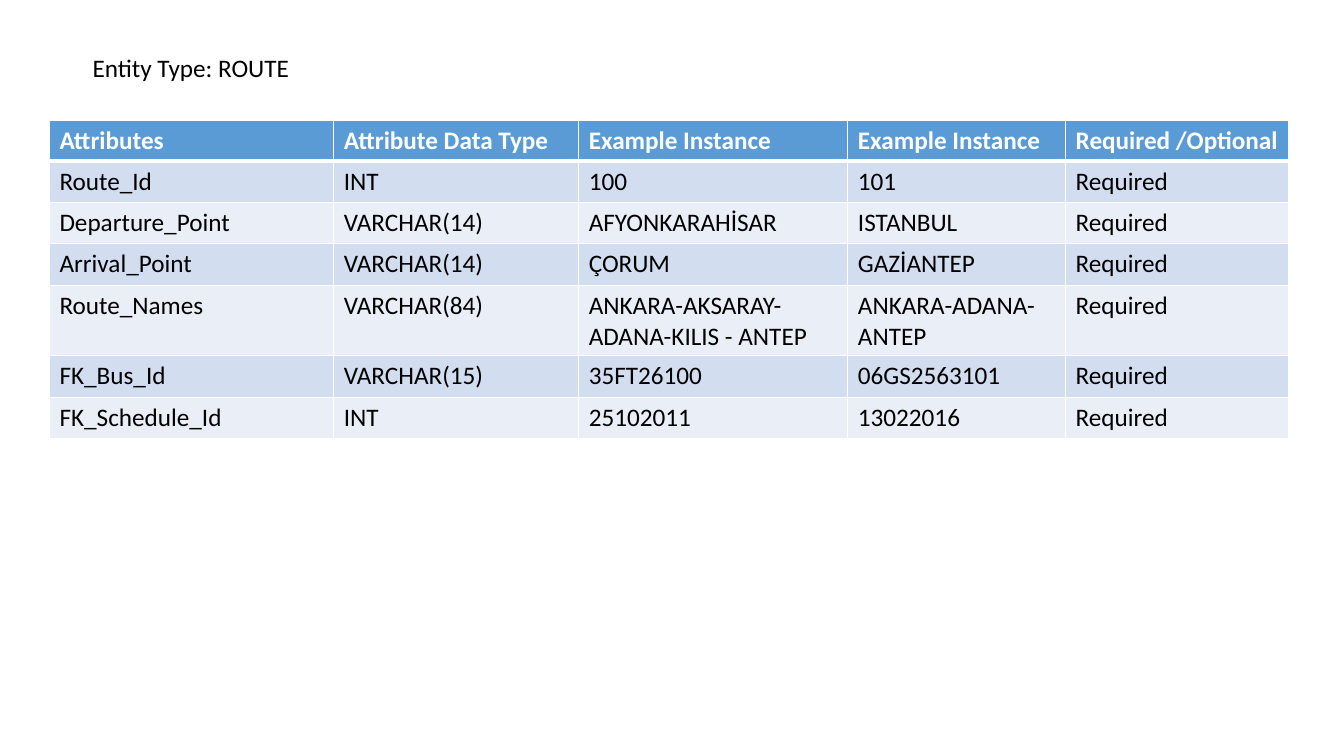
import pptx
import pptx.util
import pptx.dml.color
import pptx.enum.text
import pptx.oxml.ns
import lxml.etree

TITLE = "Entity Type: ROUTE"
HEADINGS = ("Attributes", "Attribute Data Type", "Example Instance", "Example Instance", "Required /Optional")
ATTRIBUTES = [
    ("Route_Id", "INT", "100", "101", "Required"),
    ("Departure_Point", "VARCHAR(14)", "AFYONKARAHİSAR", "ISTANBUL", "Required"),
    ("Arrival_Point", "VARCHAR(14)", "ÇORUM", "GAZİANTEP", "Required"),
    ("Route_Names", "VARCHAR(84)", "ANKARA-AKSARAY-ADANA-KILIS - ANTEP", "ANKARA-ADANA-ANTEP", "Required"),
    ("FK_Bus_Id", "VARCHAR(15)", "35FT26100", "06GS2563101", "Required"),
    ("FK_Schedule_Id", "INT", "25102011", "13022016", "Required"),
]
COLORS = {"text": "000000", "white": "FFFFFF", "header": "5B9BD5", "odd": "D2DEEF", "even": "EAEFF7"}
COLUMN_WIDTHS = (2.82, 2.43, 2.67, 2.16, 2.21)
ROW_HEIGHT = 0.41
TABLE_LEFT, TABLE_TOP = 0.49, 1.19


def write(frame, text, color="text", bold=False, size=18, font="Calibri"):
    span = frame.paragraphs[0].add_run()
    span.text = text
    span.font.name = font
    span.font.size = pptx.util.Pt(size)
    span.font.bold = bold
    span.font.color.rgb = pptx.dml.color.RGBColor.from_string(COLORS[color])


def draw_borders(cell, top, bottom):
    properties = cell._tc.get_or_add_tcPr()
    for side, points in (("L", 1), ("R", 1), ("T", top), ("B", bottom)):
        line = lxml.etree.SubElement(properties, pptx.oxml.ns.qn(f"a:ln{side}"), w=str(pptx.util.Pt(points)))
        fill = lxml.etree.SubElement(line, pptx.oxml.ns.qn("a:solidFill"))
        lxml.etree.SubElement(fill, pptx.oxml.ns.qn("a:srgbClr"), val=COLORS["white"])


def add_title(page):
    box = page.shapes.add_textbox(*map(pptx.util.Inches, (0.82, 0.47, 2.17, 0.4)))
    box.text_frame.word_wrap = False
    box.text_frame.auto_size = pptx.enum.text.MSO_AUTO_SIZE.SHAPE_TO_FIT_TEXT
    write(box.text_frame, TITLE)


def add_attribute_table(page):
    rows = [HEADINGS, *ATTRIBUTES]
    bounds = (TABLE_LEFT, TABLE_TOP, sum(COLUMN_WIDTHS), ROW_HEIGHT * len(rows))
    table = page.shapes.add_table(len(rows), len(HEADINGS), *map(pptx.util.Inches, bounds)).table
    for column, width in zip(table.columns, COLUMN_WIDTHS):
        column.width = pptx.util.Inches(width)
    for index, values in enumerate(rows):
        table.rows[index].height = pptx.util.Inches(ROW_HEIGHT)
        heading = index == 0
        shade = "header" if heading else "odd" if index % 2 else "even"
        for position, value in enumerate(values):
            cell = table.cell(index, position)
            draw_borders(cell, top=3 if index == 1 else 1, bottom=3 if heading else 1)
            cell.fill.solid()
            cell.fill.fore_color.rgb = pptx.dml.color.RGBColor.from_string(COLORS[shade])
            write(cell.text_frame, value, color="white" if heading else "text", bold=heading)


def main():
    deck = pptx.Presentation()
    deck.slide_width = pptx.util.Inches(13.33)
    deck.slide_height = pptx.util.Inches(7.5)
    page = deck.slides.add_slide(deck.slide_layouts[6])
    add_title(page)
    add_attribute_table(page)
    deck.save("out.pptx")


if __name__ == "__main__":
    main()
